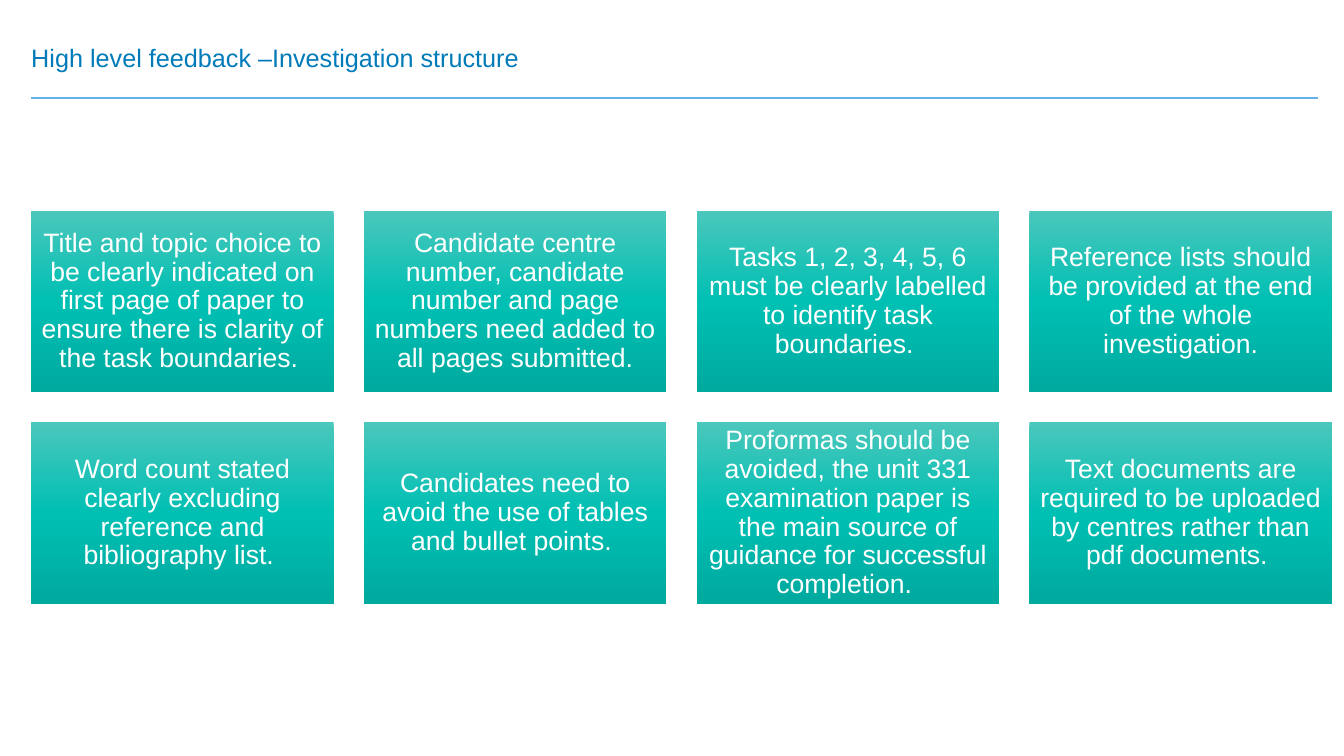
"""Build the investigation structure feedback slide."""
from copy import deepcopy

from lxml import etree
from pptx import Presentation
from pptx.dml.color import RGBColor
from pptx.enum import shapes, text
from pptx.oxml import ns
from pptx.util import Inches, Pt

TITLE_BLUE = RGBColor(0x00, 0x7B, 0xB9)
RULE_BLUE = RGBColor(0x65, 0xB2, 0xE6)
WHITE = RGBColor(0xFF, 0xFF, 0xFF)
TEALS = [
    RGBColor(0x4B, 0xC7, 0xBC),
    RGBColor(0x00, 0xBF, 0xB3),
    RGBColor(0x00, 0xAA, 0x9F),
]

FEEDBACK = [
    "Title and topic choice to be clearly indicated on first page of paper to ensure there is clarity of the task boundaries. ",
    "Candidate centre number, candidate number and page numbers need added to all pages submitted.",
    "Tasks 1, 2, 3, 4, 5, 6 must be clearly labelled to identify task boundaries. ",
    "Reference lists should be provided at the end of the whole investigation.",
    "Word count stated clearly excluding reference and bibliography list. ",
    "Candidates need to avoid the use of tables and bullet points. ",
    "Proformas should be avoided, the unit 331 examination paper is the main source of guidance for successful completion. ",
    "Text documents are required to be uploaded by centres rather than pdf documents. ",
]
COLUMNS = 4
LEFT, TOP = 0.31, 2.09
CARD_WIDTH, CARD_HEIGHT = 3, 1.8
GAP = 0.3


def write(frame, words, size, color, align, anchor, inset):
    frame.word_wrap = True
    frame.auto_size = text.MSO_AUTO_SIZE.NONE
    frame.vertical_anchor = anchor
    frame.margin_left = frame.margin_right = Inches(inset)
    frame.margin_top = frame.margin_bottom = Inches(inset)
    frame.text = words
    paragraph = frame.paragraphs[0]
    paragraph.alignment = align
    paragraph.line_spacing = 0.9
    paragraph.font.name = "Arial"
    paragraph.font.size = Pt(size)
    paragraph.font.color.rgb = color


deck = Presentation()
deck.slide_width, deck.slide_height = Inches(13.33), Inches(7.5)
slide = deck.slides.add_slide(deck.slide_layouts[5])

heading = slide.shapes.title
heading.left, heading.top = Inches(LEFT), Inches(0.23)
heading.width, heading.height = Inches(11.18), Inches(0.49)
write(heading.text_frame, "High level feedback –Investigation structure", size=18,
      color=TITLE_BLUE, align=text.PP_ALIGN.LEFT, anchor=text.MSO_ANCHOR.BOTTOM, inset=0)

rule = slide.shapes.add_connector(
    shapes.MSO_CONNECTOR.STRAIGHT, Inches(LEFT), Inches(0.97), Inches(13.07), Inches(0.97))
rule.line.color.rgb = RULE_BLUE
rule.line.width = Pt(1.75)
etree.SubElement(rule.element.spPr, ns.qn("a:effectLst"))

for index, advice in enumerate(FEEDBACK):
    row, column = divmod(index, COLUMNS)
    card = slide.shapes.add_shape(
        shapes.MSO_SHAPE.RECTANGLE,
        Inches(LEFT + column * (CARD_WIDTH + GAP)), Inches(TOP + row * (CARD_HEIGHT + GAP)),
        Inches(CARD_WIDTH), Inches(CARD_HEIGHT))
    card.shadow.inherit = False
    card.line.fill.background()
    card.fill.gradient()
    card.fill.gradient_angle = 270
    stop_list = card.element.spPr.find(".//" + ns.qn("a:gsLst"))
    stop_list.insert(1, deepcopy(stop_list[0]))
    for stop, position, teal in zip(card.fill.gradient_stops, (0, 0.5, 1), TEALS):
        stop.position = position
        stop.color.rgb = teal
    write(card.text_frame, advice, size=19, color=WHITE, align=text.PP_ALIGN.CENTER,
          anchor=text.MSO_ANCHOR.MIDDLE, inset=0.08)

deck.save("out.pptx")
